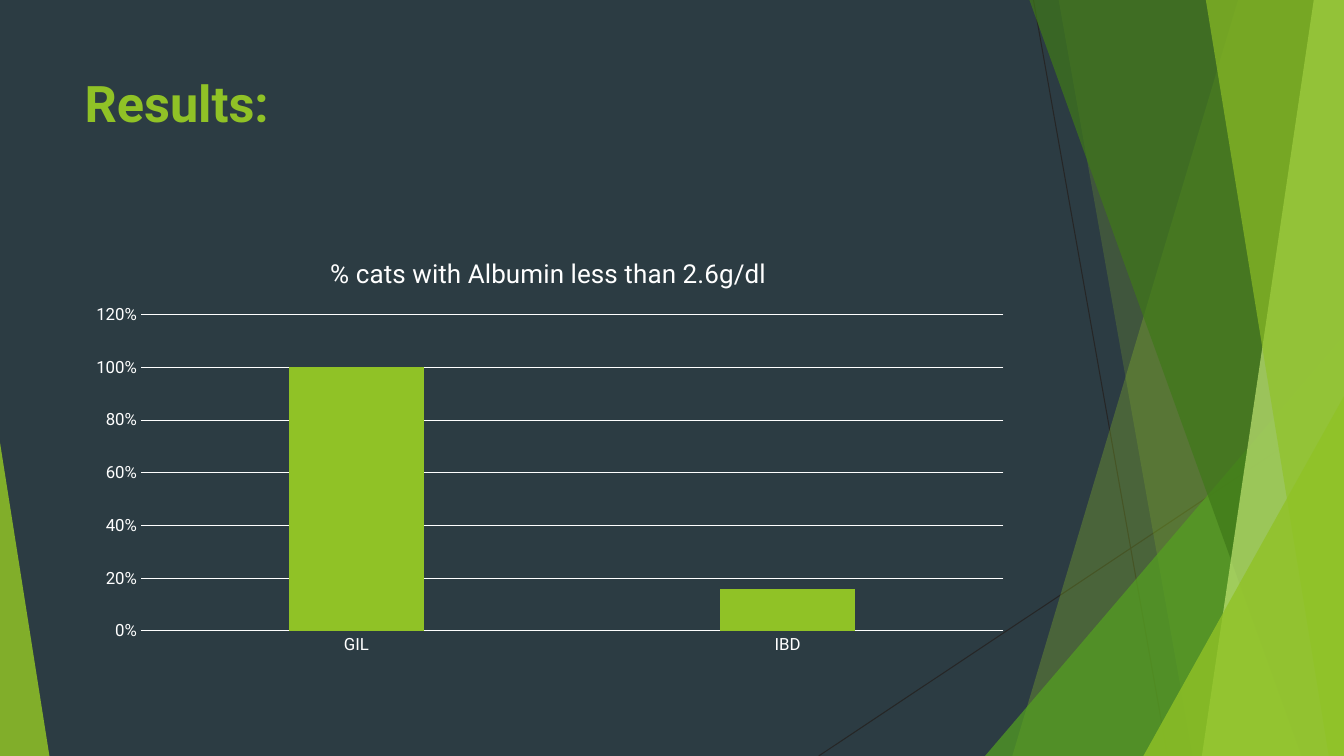
from dataclasses import dataclass

import pptx
import pptx.chart.data
import pptx.dml.color
import pptx.enum.chart
import pptx.enum.shapes
import pptx.enum.text
import pptx.oxml
import pptx.oxml.ns
import pptx.util
from pptx.util import Inches

COLORS = {
    "background": "2C3C43",
    "hairline": "262626",
    "lime": "90C226",
    "green": "54A021",
    "forest": "3F7819",
    "pale": "C0E474",
    "text": "FFFFFF",
}
FONT = "Roboto"
WIDTH, HEIGHT = 13.33, 7.5
ALBUMIN_TITLE = "% cats with Albumin less than 2.6g/dl"


@dataclass(frozen=True)
class Hairline:
    start: tuple[float, float]
    end: tuple[float, float]


@dataclass(frozen=True)
class Band:
    top_left: float
    bottom_left: float
    color: str
    opacity: int


@dataclass(frozen=True)
class Corner:
    left: float
    top: float
    width: float
    apex: float
    color: str
    opacity: int


HAIRLINES = [
    Hairline((10.25, 0), (11.58, HEIGHT)),
    Hairline((WIDTH, 4.03), (8.12, HEIGHT)),
]
FACETS = [
    Band(12.28, 10.04, "lime", 30),
    Band(10.5, 11.83, "lime", 20),
    Corner(9.77, 3.33, 3.56, 1, "green", 72),
    Band(10.21, 12.91, "forest", 70),
    Band(13.03, 11.92, "pale", 70),
    Band(11.96, 13.18, "lime", 65),
    Corner(11.34, 3.93, 1.99, 1, "lime", 80),
    Corner(0, 4.39, 0.49, 0, "lime", 85),
]


def rgb(name: str) -> pptx.dml.color.RGBColor:
    return pptx.dml.color.RGBColor.from_string(COLORS[name])


def style_font(font, size: float, color: str, bold: bool = False) -> None:
    font.name = FONT
    font.size = pptx.util.Pt(size)
    font.bold = bold
    font.color.rgb = rgb(color)


def style_line(line) -> None:
    line.color.rgb = rgb("text")
    line.width = pptx.util.Pt(0.75)


def draw_hairline(slide, hairline: Hairline) -> None:
    connector = slide.shapes.add_connector(
        pptx.enum.shapes.MSO_CONNECTOR.STRAIGHT,
        *map(Inches, hairline.start + hairline.end),
    )
    connector.line.color.rgb = rgb("hairline")
    connector.line.width = pptx.util.Pt(0.75)
    properties = connector._element.spPr
    properties.append(pptx.oxml.parse_xml(f'<a:effectLst {pptx.oxml.ns.nsdecls("a")}/>'))


def draw_facet(slide, facet: Band | Corner) -> None:
    if isinstance(facet, Band):
        outline = slide.shapes.build_freeform(Inches(facet.top_left), 0)
        corners = [(WIDTH, 0), (WIDTH, HEIGHT), (facet.bottom_left, HEIGHT)]
        outline.add_line_segments([(Inches(x), Inches(y)) for x, y in corners])
        shape = outline.convert_to_shape()
    else:
        shape = slide.shapes.add_shape(
            pptx.enum.shapes.MSO_SHAPE.ISOSCELES_TRIANGLE,
            Inches(facet.left),
            Inches(facet.top),
            Inches(facet.width),
            Inches(HEIGHT - facet.top),
        )
        shape.adjustments[0] = facet.apex
    shape.shadow.inherit = False
    shape.line.fill.background()
    shape.fill.solid()
    shape.fill.fore_color.rgb = rgb(facet.color)
    fill_color = shape._element.spPr.find(".//" + pptx.oxml.ns.qn("a:srgbClr"))
    fill_color.append(pptx.oxml.parse_xml(
        f'<a:alpha {pptx.oxml.ns.nsdecls("a")} val="{facet.opacity * 1000}"/>'
    ))


def write_title(slide) -> None:
    title = slide.shapes.title
    title.left, title.top = Inches(0.74), Inches(0.67)
    title.width, title.height = Inches(9.4), Inches(1.44)
    frame = title.text_frame
    frame.text = "Results:"
    frame.vertical_anchor = pptx.enum.text.MSO_ANCHOR.TOP
    heading = frame.paragraphs[0]
    heading.alignment = pptx.enum.text.PP_ALIGN.LEFT
    style_font(heading.font, 36, "lime", bold=True)


def place_plot(chart, x: float, y: float, width: float, height: float) -> None:
    plot_area = chart._chartSpace.chart.plotArea
    for layout in plot_area.findall(pptx.oxml.ns.qn("c:layout")):
        plot_area.remove(layout)
    plot_area.insert(0, pptx.oxml.parse_xml(
        f'<c:layout {pptx.oxml.ns.nsdecls("c")}><c:manualLayout>'
        '<c:layoutTarget val="inner"/><c:xMode val="edge"/><c:yMode val="edge"/>'
        f'<c:x val="{x}"/><c:y val="{y}"/><c:w val="{width}"/><c:h val="{height}"/>'
        "</c:manualLayout></c:layout>"
    ))


def draw_albumin_chart(slide) -> None:
    albumin = pptx.chart.data.CategoryChartData(number_format="0%")
    albumin.categories = ["GIL", "IBD"]
    albumin.add_series(ALBUMIN_TITLE, [1, 0.16])
    chart = slide.shapes.add_chart(
        pptx.enum.chart.XL_CHART_TYPE.COLUMN_CLUSTERED,
        Inches(0.74), Inches(2.36), Inches(9.4), Inches(4.24),
        albumin,
    ).chart
    style_font(chart.font, 10, "text")
    chart.has_legend = False
    chart.has_title = True
    chart.chart_title.text_frame.text = ALBUMIN_TITLE
    style_font(chart.chart_title.text_frame.paragraphs[0].font, 18.6, "text")
    chart.chart_title.include_in_layout = False
    place_plot(chart, 0.07, 0.18, 0.91, 0.74)

    columns = chart.plots[0]
    columns.vary_by_categories = False
    columns.gap_width = 219
    columns.overlap = -27
    fill = columns.series[0].format.fill
    fill.solid()
    fill.fore_color.rgb = rgb("lime")

    for axis in (chart.category_axis, chart.value_axis):
        axis.major_tick_mark = pptx.enum.chart.XL_TICK_MARK.NONE
        axis.minor_tick_mark = pptx.enum.chart.XL_TICK_MARK.NONE
        style_font(axis.tick_labels.font, 12, "text")
    style_line(chart.category_axis.format.line)
    percent = chart.value_axis
    percent.minimum_scale, percent.maximum_scale, percent.major_unit = 0, 1.2, 0.2
    percent.tick_labels.number_format = "0%"
    percent.tick_labels.number_format_is_linked = False
    percent.format.line.fill.background()
    percent.has_major_gridlines = True
    style_line(percent.major_gridlines.format.line)


def main() -> None:
    presentation = pptx.Presentation()
    presentation.slide_width = Inches(WIDTH)
    presentation.slide_height = Inches(HEIGHT)
    slide = presentation.slides.add_slide(presentation.slide_layouts[5])
    slide.background.fill.solid()
    slide.background.fill.fore_color.rgb = rgb("background")
    for hairline in HAIRLINES:
        draw_hairline(slide, hairline)
    for facet in FACETS:
        draw_facet(slide, facet)
    write_title(slide)
    draw_albumin_chart(slide)
    presentation.save("out.pptx")


if __name__ == "__main__":
    main()
